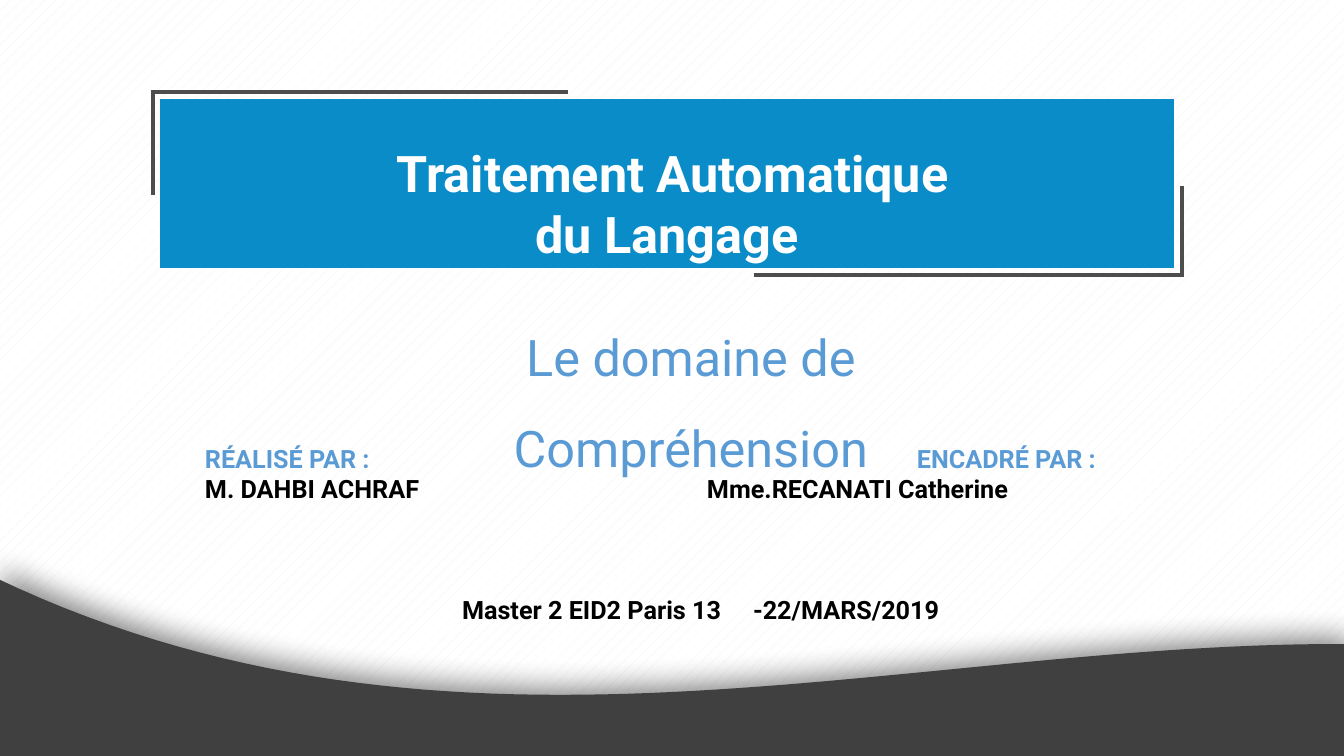
from lxml.etree import SubElement
from pptx import Presentation
from pptx.dml.color import RGBColor
from pptx.enum.dml import MSO_PATTERN
from pptx.enum.shapes import MSO_CONNECTOR, MSO_SHAPE
from pptx.enum.text import MSO_ANCHOR as Anchor, PP_ALIGN as Align
from pptx.oxml.ns import qn
from pptx.util import Pt

WHITE = RGBColor(0xFF, 0xFF, 0xFF)
BLACK = RGBColor(0, 0, 0)
STRIPE = RGBColor(0xF2, 0xF2, 0xF2)
CHARCOAL = RGBColor(0x40, 0x40, 0x40)
BRACKET = RGBColor(0x4D, 0x4D, 0x4D)
BLUE = RGBColor(0x0A, 0x8C, 0xC8)
SKY = RGBColor(0x5B, 0x9B, 0xD5)

WIDTH, HEIGHT = 1344, 756
PX = 12192000 / WIDTH


def emu(px):
    return round(px * PX)


def cubic(points, steps=60):
    """Return evenly sampled points of a cubic Bézier curve."""
    curve = []
    for step in range(steps + 1):
        t = step / steps
        weights = ((1 - t) ** 3, 3 * t * (1 - t) ** 2, 3 * t * t * (1 - t), t ** 3)
        curve.append(tuple(sum(w * point[axis] for w, point in zip(weights, points))
                           for axis in (0, 1)))
    return curve


class Page:
    font = "Roboto"

    def __init__(self, deck):
        self.slide = deck.slides.add_slide(deck.slide_layouts[6])
        self.shapes = self.slide.shapes

    def background(self, fore, back):
        fill = self.slide.background.fill
        fill.patterned()
        fill.pattern = MSO_PATTERN.PERCENT_10
        fill.fore_color.rgb = fore
        fill.back_color.rgb = back

    def paint(self, shape, color):
        shape.shadow.inherit = False
        shape.fill.solid()
        shape.fill.fore_color.rgb = color
        shape.line.fill.background()
        return shape

    def outline(self, points, color):
        scaled = [(emu(x), emu(y)) for x, y in points]
        builder = self.shapes.build_freeform(*scaled[0])
        builder.add_line_segments(scaled[1:], close=True)
        return self.paint(builder.convert_to_shape(), color)

    def shadow(self, shape, blur, distance, angle, opacity):
        effects = shape._element.spPr.find(qn("a:effectLst"))
        outer = SubElement(effects, qn("a:outerShdw"), blurRad=str(Pt(blur)),
                           dist=str(Pt(distance)), dir=str(angle * 60000),
                           algn="ctr", rotWithShape="0")
        color = SubElement(outer, qn("a:srgbClr"), val=str(BLACK))
        SubElement(color, qn("a:alpha"), val=str(opacity * 1000))

    def rectangle(self, *place, color):
        shape = self.shapes.add_shape(MSO_SHAPE.RECTANGLE, *map(emu, place))
        return self.paint(shape, color)

    def line(self, *ends, color, weight=3):
        line = self.shapes.add_connector(MSO_CONNECTOR.STRAIGHT, *map(emu, ends))
        line.line.color.rgb = color
        line.line.width = Pt(weight)
        SubElement(line._element.spPr, qn("a:effectLst"))

    def text(self, *place, lines, **style):
        box = self.shapes.add_textbox(*map(emu, place))
        self.fill_text(box, lines, **style)

    def fill_text(self, box, lines, size, bold=False, align=Align.LEFT, spacing=1.0,
                  top=5, anchor=Anchor.TOP):
        """Fill a box with lines of (text, colour, tab stop in px or None)."""
        frame = box.text_frame
        layout = {"word_wrap": True, "vertical_anchor": anchor,
                  "margin_left": emu(10), "margin_right": emu(10),
                  "margin_top": emu(top), "margin_bottom": emu(5)}
        for name, value in layout.items():
            setattr(frame, name, value)
        for index, (text, color, tab) in enumerate(lines):
            para = frame.add_paragraph() if index else frame.paragraphs[0]
            para.alignment = align
            para.line_spacing = spacing
            if tab:
                stops = SubElement(para._p.get_or_add_pPr(), qn("a:tabLst"))
                SubElement(stops, qn("a:tab"), pos=str(emu(tab)), algn="l")
            span = para.add_run()
            span.text = text
            for name, value in {"name": self.font, "size": Pt(size), "bold": bold}.items():
                setattr(span.font, name, value)
            span.font.color.rgb = color


def main():
    deck = Presentation()
    deck.slide_width, deck.slide_height = emu(WIDTH), emu(HEIGHT)
    page = Page(deck)
    page.background(STRIPE, WHITE)

    crest = cubic([(-4, 578), (451, 795), (895, 643), (1344, 644)])
    wave = page.outline(crest + [(1344, 759), (-5, 759)], CHARCOAL)
    page.shadow(wave, blur=21, distance=7, angle=303, opacity=48)

    banner = page.rectangle(160, 99, 1014, 169, color=BLUE)
    page.fill_text(banner, [(" Traitement Automatique", WHITE, None),
                            ("du Langage", WHITE, None)],
                   size=36, bold=True, align=Align.CENTER, top=44, anchor=Anchor.MIDDLE)
    for ends in [(568, 92, 151, 92), (153, 195, 153, 91),
                 (754, 275, 1184, 275), (1182, 186, 1182, 277)]:
        page.line(*ends, color=BRACKET)

    page.text(195, 438, 1013, 70, size=18, bold=True, lines=[
        ("RÉALISÉ PAR :\tENCADRÉ PAR :", SKY, 712),
        ("M. DAHBI ACHRAF\tMme.RECANATI Catherine", BLACK, 502)])
    page.text(452, 589, 540, 40, size=18, bold=True, lines=[
        ("Master 2 EID2 Paris 13\t-22/MARS/2019", BLACK, 291)])
    page.text(491, 291, 400, 190, size=36, align=Align.CENTER, spacing=1.5,
              lines=[("Le domaine de Compréhension", SKY, None)])
    deck.save("out.pptx")


if __name__ == "__main__":
    main()
